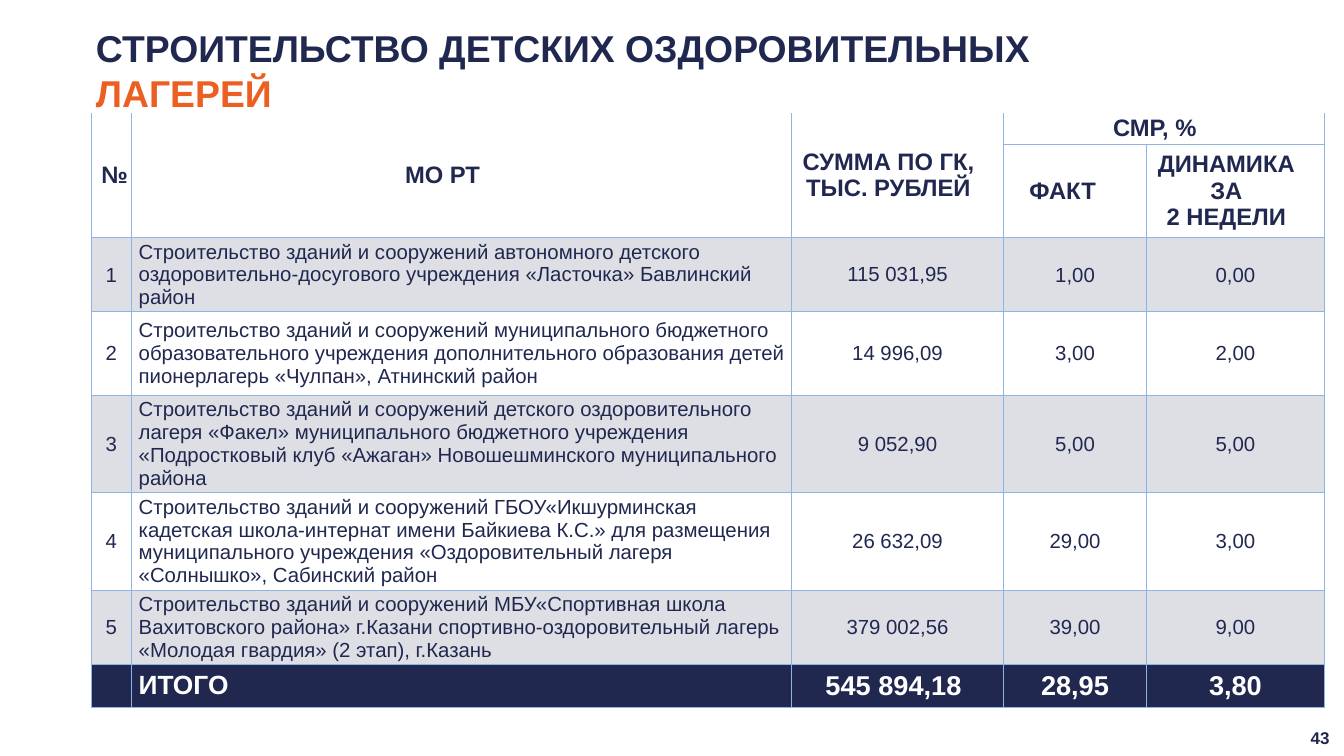
from lxml.etree import SubElement
from pptx import Presentation
from pptx.dml.color import RGBColor
from pptx.enum.shapes import MSO_SHAPE
from pptx.enum.text import MSO_ANCHOR, MSO_AUTO_SIZE, PP_ALIGN
from pptx.oxml.ns import qn
from pptx.util import Inches, Pt

NAVY, ORANGE, GREY, WHITE, BORDER = "212850", "EB6022", "DEDFE5", "FFFFFF", "8EB4E3"
FONT = "Arial"
LEFT, CENTER, RIGHT = PP_ALIGN.LEFT, PP_ALIGN.CENTER, PP_ALIGN.RIGHT

TITLE = [("СТРОИТЕЛЬСТВО ДЕТСКИХ ОЗДОРОВИТЕЛЬНЫХ ", NAVY), ("ЛАГЕРЕЙ", ORANGE)]
PAGE_NUMBER = "43"

COLUMNS = [0.66, 10.8, 3.47, 2.34, 2.91]
ROWS = [0.51, 1.53, 1.21, 1.37, 1.59, 1.6, 1.21, 0.7]
MERGES = [(0, 0, 1, 0), (0, 1, 1, 1), (0, 2, 1, 2), (0, 3, 0, 4)]

# (row, column, lines, alignment, insets left-top-right-bottom)
HEADERS = [
    (0, 0, ["№"], RIGHT, (0.17, 0, 0.35, 0)),
    (0, 1, ["МО РТ"], CENTER, (0, 0, 0.62, 0)),
    (0, 2, ["СУММА ПО ГК,", "ТЫС. РУБЛЕЙ"], CENTER, (0, 0, 0.3, 0)),
    (0, 3, ["СМР, %"], CENTER, (0, 0, 0.3, 0)),
    (1, 3, ["ФАКТ "], CENTER, (0, 0, 0.3, 0)),
    (1, 4, ["ДИНАМИКА ЗА", "2 НЕДЕЛИ"], CENTER, (0, 0, 0.3, 0)),
]
CAMPS = [
    ("1", "Строительство зданий и сооружений автономного детского оздоровительно-досугового "
     "учреждения «Ласточка» Бавлинский район", "115 031,95", "1,00", "0,00"),
    ("2", "Строительство зданий и сооружений муниципального бюджетного образовательного "
     "учреждения дополнительного образования детей пионерлагерь «Чулпан», Атнинский район",
     "14 996,09", "3,00", "2,00"),
    ("3", "Строительство зданий и сооружений детского оздоровительного лагеря «Факел» "
     "муниципального бюджетного учреждения «Подростковый клуб «Ажаган» Новошешминского "
     "муниципального района", "9 052,90", "5,00", "5,00"),
    ("4", "Строительство зданий и сооружений ГБОУ«Икшурминская кадетская школа-интернат имени "
     "Байкиева К.С.» для размещения муниципального учреждения «Оздоровительный лагеря "
     "«Солнышко», Сабинский район", "26 632,09", "29,00", "3,00"),
    ("5", "Строительство зданий и сооружений МБУ«Спортивная школа Вахитовского района» г.Казани "
     "спортивно-оздоровительный лагерь «Молодая гвардия» (2 этап), г.Казань",
     "379 002,56", "39,00", "9,00"),
]
TOTAL = ["", "ИТОГО", "545 894,18", "28,95", "3,80"]
TOTAL_SIZES = [32, 31, 32, 32, 32]
SMALL_INSETS = (0.01, 0.01, 0.01, 0)
CAMP_INSETS = [SMALL_INSETS, (0.12, 0, 0, 0), (0.07, 0, 0.07, 0), SMALL_INSETS, SMALL_INSETS]
TOTAL_INSETS = [SMALL_INSETS, (0.12, 0, 0, 0), (0, 0, 0.13, 0), SMALL_INSETS, SMALL_INSETS]
ALIGNMENTS = [CENTER, LEFT, CENTER, CENTER, CENTER]


def color(value):
    return RGBColor.from_string(value)


def write(frame, lines, size=24, bold=False, align=LEFT):
    """Fill a text frame; each line is a list of (text, colour) spans."""
    for index, spans in enumerate(lines):
        para = frame.add_paragraph() if index else frame.paragraphs[0]
        para.alignment = align
        para.font.size = Pt(size)
        for text, ink in spans:
            span = para.add_run()
            span.text = text
            span.font.name, span.font.size, span.font.bold = FONT, Pt(size), bold
            span.font.color.rgb = color(ink)


def set_insets(target, insets):
    for side, inset in zip(("left", "top", "right", "bottom"), insets):
        setattr(target, f"margin_{side}", Inches(inset))


def set_borders(cell, top=True):
    properties = cell._tc.get_or_add_tcPr()
    for position, tag in enumerate(("a:lnL", "a:lnR", "a:lnT", "a:lnB")):
        line = properties.makeelement(qn(tag), {"w": str(Pt(1))})
        properties.insert(position, line)
        if tag == "a:lnT" and not top:
            SubElement(line, qn("a:noFill"))
        else:
            SubElement(SubElement(line, qn("a:solidFill")), qn("a:srgbClr"), val=BORDER)


def fill_cell(cell, lines, insets, ink=NAVY, **style):
    cell.vertical_anchor = MSO_ANCHOR.MIDDLE
    set_insets(cell, insets)
    write(cell.text_frame, [[(line, ink)] if line else [] for line in lines], **style)


def add_title(page):
    title = page.shapes.title
    title.left, title.top, title.width, title.height = map(Inches, (1.57, 0.39, 15.92, 1.5))
    frame = title.text_frame
    frame.word_wrap, frame.auto_size = True, MSO_AUTO_SIZE.NONE
    frame.vertical_anchor = MSO_ANCHOR.TOP
    set_insets(frame, (0, 0.02, 0, 0))
    write(frame, [TITLE], size=44, bold=True)


def add_camp_table(page):
    table = page.shapes.add_table(len(ROWS), len(COLUMNS), Inches(1.49), Inches(1.85),
                                  Inches(sum(COLUMNS)), Inches(sum(ROWS))).table
    table.first_row = table.horz_banding = False
    for column, width in zip(table.columns, COLUMNS):
        column.width = Inches(width)
    for row, height in zip(table.rows, ROWS):
        row.height = Inches(height)

    last = len(ROWS) - 1
    for r, row in enumerate(table.rows):
        for cell in row.cells:
            if r == last or (r >= 2 and r % 2 == 0):
                cell.fill.solid()
                cell.fill.fore_color.rgb = color(NAVY if r == last else GREY)
            else:
                cell.fill.background()
            set_borders(cell, top=r > 0)
    for top, left, bottom, right in MERGES:
        table.cell(top, left).merge(table.cell(bottom, right))

    for r, c, lines, align, insets in HEADERS:
        fill_cell(table.cell(r, c), lines, insets, size=28, bold=True, align=align)
    for r, camp in enumerate(CAMPS, 2):
        for c, text in enumerate(camp):
            fill_cell(table.cell(r, c), [text], CAMP_INSETS[c], align=ALIGNMENTS[c])
    for c, text in enumerate(TOTAL):
        fill_cell(table.cell(last, c), [text], TOTAL_INSETS[c], ink=WHITE,
                  size=TOTAL_SIZES[c], bold=True, align=ALIGNMENTS[c])


def add_page_number(page):
    badge = page.shapes.add_shape(MSO_SHAPE.ROUNDED_RECTANGLE,
                                  *map(Inches, (21.24, 11.77, 0.72, 0.59)))
    badge.shadow.inherit = False
    badge.fill.background()
    badge.line.fill.background()
    badge.text_frame.vertical_anchor = MSO_ANCHOR.MIDDLE
    write(badge.text_frame, [[(PAGE_NUMBER, NAVY)]], size=20, bold=True, align=CENTER)


def main():
    deck = Presentation()
    deck.slide_width, deck.slide_height = Inches(21.99), Inches(12.37)
    page = deck.slides.add_slide(deck.slide_layouts[5])
    add_title(page)
    add_camp_table(page)
    add_page_number(page)
    deck.save("out.pptx")


if __name__ == "__main__":
    main()
